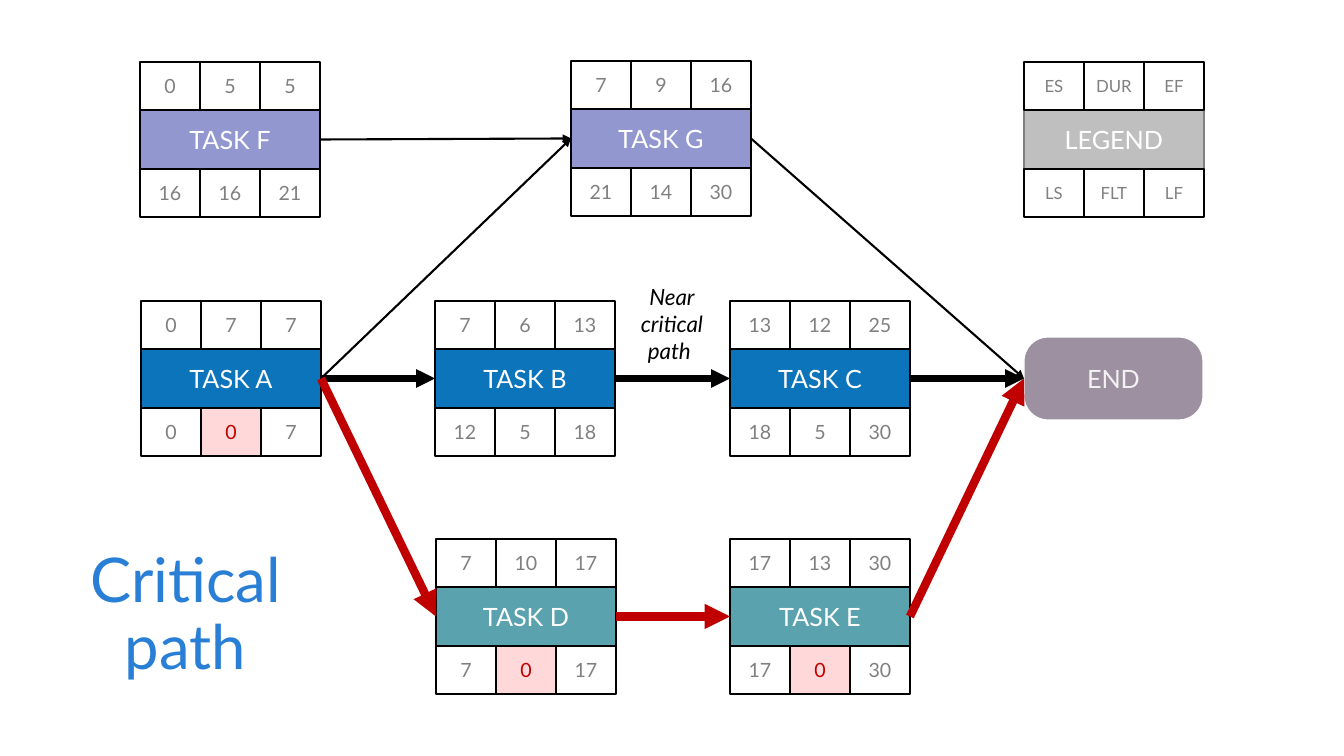
import pptx
import pptx.dml.color
import pptx.enum.shapes
import pptx.enum.text
import pptx.oxml.ns
import pptx.util
from lxml import etree

PX = 12192000 / 1344
SHAPES = pptx.enum.shapes.MSO_SHAPE
CELL_WIDTH, CELL_HEIGHT, BAND_HEIGHT = 60, 48, 59
COLORS = {
    "black": "000000", "white": "FFFFFF", "gray": "808080", "silver": "BFBFBF",
    "blue": "0C74BB", "teal": "5AA2AE", "violet": "9297CF", "mauve": "9D90A0",
    "title": "297FD5", "end text": "F2F2F2", "critical": "C00000", "red": "FF0000",
}
# name: (left, top, band colour, early row, late row)
TASKS = {
    "TASK A": (141, 301, "blue", "0 7 7", "0 0 7"),
    "TASK B": (435, 301, "blue", "7 6 13", "12 5 18"),
    "TASK C": (730, 301, "blue", "13 12 25", "18 5 30"),
    "TASK D": (436, 539, "teal", "7 10 17", "7 0 17"),
    "TASK E": (730, 539, "teal", "17 13 30", "17 0 30"),
    "TASK G": (571, 61, "violet", "7 9 16", "21 14 30"),
    "TASK F": (140, 62, "violet", "0 5 5", "16 16 21"),
    "LEGEND": (1024, 62, "silver", "ES DUR EF", "LS FLT LF"),
}
# from, to, colour, width in points
ARROWS = [
    ("TASK F", "TASK G", "black", 1.5),
    ("TASK A", "TASK G", "black", 1.5),
    ("TASK G", "END", "black", 1.5),
    ("TASK D", "TASK E", "critical", 6),
    ("TASK E", "END", "critical", 6),
    ("TASK A", "TASK B", "black", 4.5),
    ("TASK B", "TASK C", "black", 4.5),
    ("TASK C", "END", "black", 4.5),
    ("TASK A", "TASK D", "critical", 6),
]


def px(*lengths):
    return [pptx.util.Emu(round(length * PX)) for length in lengths]


def rgb(name):
    return pptx.dml.color.RGBColor.from_string(COLORS[name])


def write(shape, text, color, size, italic=False, line_spacing=None, anchor="MIDDLE"):
    """Fill a shape with centred paragraphs, one for each line of text."""
    frame = shape.text_frame
    frame.text = text
    frame.word_wrap = True
    frame.vertical_anchor = pptx.enum.text.MSO_ANCHOR[anchor]
    font_format = {"name": "Lato", "size": pptx.util.Pt(size), "italic": italic}
    for paragraph in frame.paragraphs:
        paragraph.alignment = pptx.enum.text.PP_ALIGN.CENTER
        if line_spacing:
            paragraph.line_spacing = line_spacing
        for run in paragraph.runs:
            for attribute, value in font_format.items():
                setattr(run.font, attribute, value)
            run.font.color.rgb = rgb(color)


def add_box(slide, kind, box, fill, line, text, text_color, size):
    shape = slide.shapes.add_shape(kind, *px(*box))
    shape.shadow.inherit = False
    if fill:
        shape.fill.solid()
        shape.fill.fore_color.rgb = rgb(fill)
    else:
        shape.fill.background()
    shape.line.color.rgb = rgb(line)
    shape.line.width = pptx.util.Pt(0.85)
    write(shape, text, text_color, size)
    for side in ("left", "right", "top", "bottom"):
        setattr(shape.text_frame, f"margin_{side}", 0)
    return shape


def set_fill_alpha(shape, percent):
    color = shape.element.spPr.find(".//" + pptx.oxml.ns.qn("a:srgbClr"))
    etree.SubElement(color, pptx.oxml.ns.qn("a:alpha"), val=str(percent * 1000))


def add_task(slide, name, left, top, color, early, late):
    """Draw a task's band between its rows of figures and return the band."""
    legend = name == "LEGEND"
    band = add_box(slide, SHAPES.RECTANGLE,
                   (left, top + CELL_HEIGHT, 3 * CELL_WIDTH, BAND_HEIGHT),
                   color, "gray" if legend else "black", name, "white", 18)
    late_top = top + CELL_HEIGHT + BAND_HEIGHT
    for row_top, row in ((top, early), (late_top, late)):
        for column, value in enumerate(row.split()):
            no_float = row_top == late_top and column == 1 and value == "0"
            cell = add_box(slide, SHAPES.RECTANGLE,
                           (left + column * CELL_WIDTH, row_top, CELL_WIDTH, CELL_HEIGHT),
                           "red" if no_float else None, "black", value,
                           "critical" if no_float else "gray", 12 if legend else 14)
            if no_float:
                set_fill_alpha(cell, 15)
    return band


def add_arrow(slide, start, end, color, width):
    """Join the right side of one shape to the left side of another."""
    connector = slide.shapes.add_connector(
        pptx.enum.shapes.MSO_CONNECTOR.STRAIGHT, 0, 0, 0, 0)
    connector.begin_connect(start, 3)
    connector.end_connect(end, 1)
    connector.line.color.rgb = rgb(color)
    connector.line.width = pptx.util.Pt(width)
    properties = connector.element.spPr
    etree.SubElement(properties.find(pptx.oxml.ns.qn("a:ln")),
                     pptx.oxml.ns.qn("a:tailEnd"), type="triangle")
    etree.SubElement(properties, pptx.oxml.ns.qn("a:effectLst"))


def add_title(slide):
    title = slide.shapes.title
    box = zip(("left", "top", "width", "height"), px(0, 543, 371, 146))
    for attribute, value in box:
        setattr(title, attribute, value)
    write(title, "Critical\npath", "title", 44, line_spacing=0.9)


def main():
    presentation = pptx.Presentation()
    presentation.slide_width, presentation.slide_height = px(1344, 756)
    slide = presentation.slides.add_slide(presentation.slide_layouts[5])
    add_title(slide)
    nodes = {name: add_task(slide, name, *task) for name, task in TASKS.items()}
    nodes["END"] = add_box(slide, SHAPES.ROUNDED_RECTANGLE, (1024, 337, 179, 83),
                           "mauve", "white", "END", "end text", 18)
    nodes["END"].adjustments[0] = 0.29
    for start, end, color, width in ARROWS:
        add_arrow(slide, nodes[start], nodes[end], color, width)
    near_label = slide.shapes.add_textbox(*px(607, 278, 130, 92))
    write(near_label, "Near\ncritical\npath ", "black", 16, italic=True, anchor="TOP")
    presentation.save("out.pptx")


if __name__ == "__main__":
    main()
